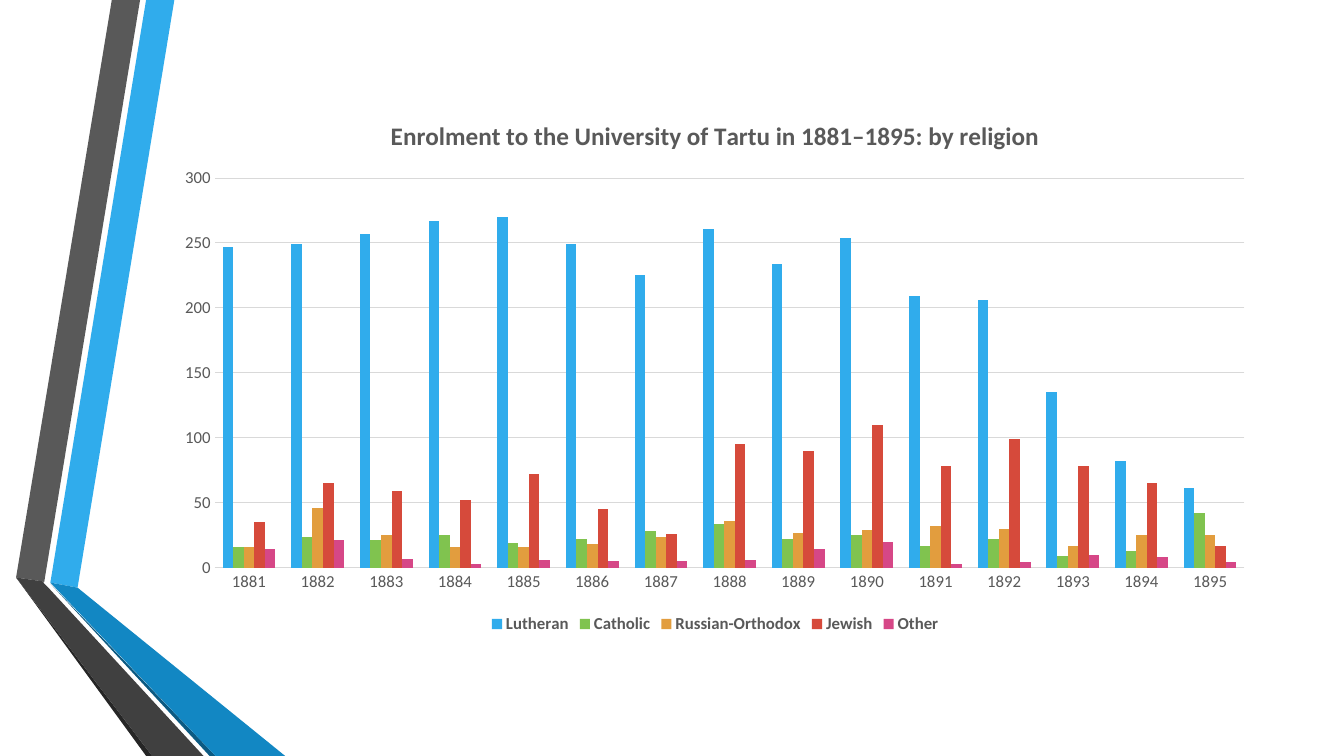
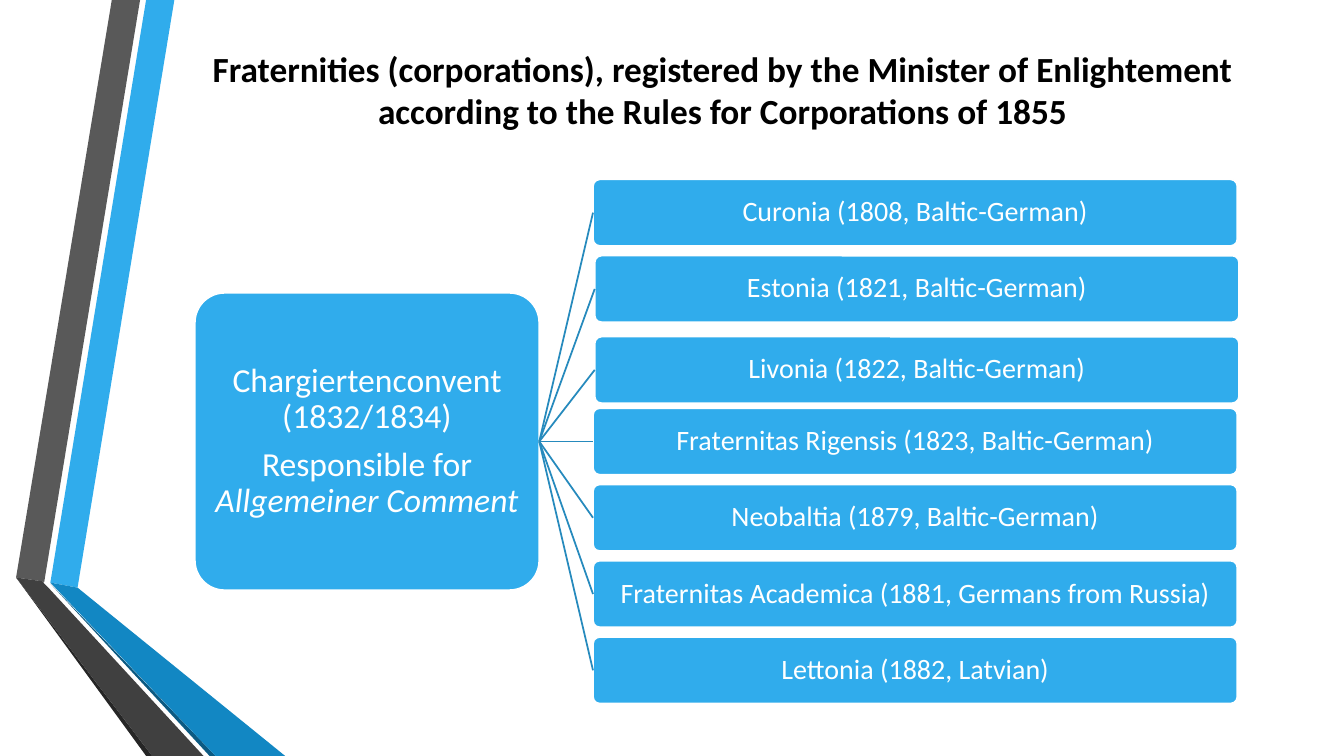
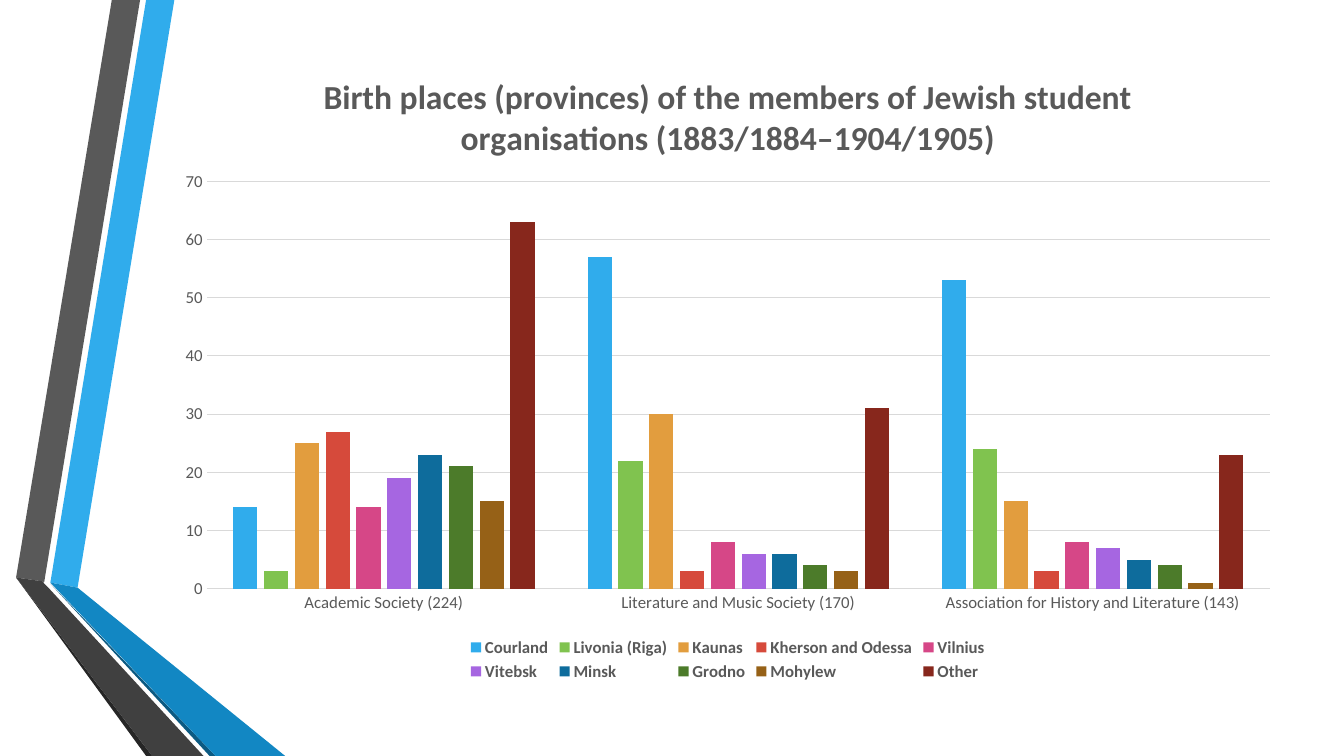
from dataclasses import dataclass
from typing import NamedTuple

from lxml.etree import SubElement
from pptx import Presentation
from pptx.chart.chart import Chart
from pptx.chart.data import CategoryChartData
from pptx.dml.color import RGBColor
from pptx.enum.chart import XL_CHART_TYPE as ChartType
from pptx.enum.chart import XL_LEGEND_POSITION as LegendPosition
from pptx.enum.chart import XL_TICK_MARK as TickMark
from pptx.enum.shapes import MSO_CONNECTOR as ConnectorType
from pptx.enum.shapes import MSO_SHAPE as ShapeType
from pptx.enum.text import MSO_ANCHOR as Anchor
from pptx.enum.text import PP_ALIGN as Align
from pptx.oxml.ns import qn
from pptx.shapes.autoshape import Shape
from pptx.slide import Slide
from pptx.text.text import Font
from pptx.util import Emu, Pt

COLUMNS, ROWS = 160, 90
SLIDE_WIDTH, SLIDE_HEIGHT = Emu(12192000), Emu(6858000)
CELL = SLIDE_WIDTH / COLUMNS
FONT = "Calibri"

BLACK = RGBColor(0x00, 0x00, 0x00)
WHITE = RGBColor(0xFF, 0xFF, 0xFF)
BLUE = RGBColor(0x30, 0xAC, 0xEC)
BLUE_FOLD = RGBColor(0x12, 0x87, 0xC3)
BLUE_EDGE = RGBColor(0x0C, 0x5A, 0x82)
BLUE_LINE = RGBColor(0x26, 0x8A, 0xBD)
GREY = RGBColor(0x59, 0x59, 0x59)
GREY_FOLD = RGBColor(0x40, 0x40, 0x40)
GREY_EDGE = RGBColor(0x26, 0x26, 0x26)
GRID_GREY = RGBColor(0xD9, 0xD9, 0xD9)
GREEN = RGBColor(0x80, 0xC3, 0x4F)
ORANGE = RGBColor(0xE2, 0x9D, 0x3E)
RED = RGBColor(0xD6, 0x4A, 0x3B)
PINK = RGBColor(0xD6, 0x47, 0x87)
PURPLE = RGBColor(0xA6, 0x66, 0xE1)
NAVY = RGBColor(0x0E, 0x6C, 0x9C)
DARK_GREEN = RGBColor(0x4C, 0x7B, 0x2A)
BROWN = RGBColor(0x96, 0x61, 0x17)
DARK_RED = RGBColor(0x87, 0x27, 0x1C)


class Area(NamedTuple):
    column: float
    row: float
    columns: float
    rows: float

    def emu(self) -> list[Emu]:
        return [cells(value) for value in self]


class Span(NamedTuple):
    text: str
    italic: bool = False


class Band(NamedTuple):
    color: RGBColor
    points: list[tuple[float, float]]


class Series(NamedTuple):
    name: str
    values: list[int]
    color: RGBColor


class Fraternity(NamedTuple):
    text: str
    column_shift: float = 0
    row_shift: float = 0


@dataclass(frozen=True)
class ColumnChart:
    title: str
    title_size: float
    area: Area
    plot: Area
    maximum: int
    step: int
    gap: int
    overlap: int
    categories: list[str]
    series: list[Series]


BANDS = [
    Band(BLUE, [(6, 69.36), (9.24, 69.96), (20.76, 0), (17.4, 0)]),
    Band(GREY, [(16.68, 0), (13.32, 0), (1.92, 68.76), (5.28, 69.24)]),
    Band(GREY_EDGE, [(1.92, 68.76), (17.4, ROWS), (18.12, ROWS)]),
    Band(BLUE_EDGE, [(6, 69.48), (24.96, ROWS), (25.68, ROWS)]),
    Band(BLUE_FOLD, [(6, 69.36), (25.68, ROWS), (33.96, ROWS), (9.24, 69.96)]),
    Band(GREY_FOLD, [(24.24, ROWS), (5.76, 69.96), (5.16, 69.36),
                     (5.28, 69.24), (1.92, 68.76), (18.12, ROWS)]),
]

RELIGION = ColumnChart(
    title="Enrolment to the University of Tartu in 1881–1895: by religion",
    title_size=18,
    area=Area(19.44, 11.64, 131.4, 64.32),
    plot=Area(25.56, 21.2, 122.6, 46.4),
    maximum=300, step=50, gap=150, overlap=0,
    categories=[str(year) for year in range(1881, 1896)],
    series=[
        Series("Lutheran", [247, 249, 257, 267, 270, 249, 225, 261, 234, 254,
                            209, 206, 135, 82, 61], BLUE),
        Series("Catholic", [16, 24, 21, 25, 19, 22, 28, 34, 22, 25,
                            17, 22, 9, 13, 42], GREEN),
        Series("Russian-Orthodox", [16, 46, 25, 16, 16, 18, 24, 36, 27, 29,
                                    32, 30, 17, 25, 25], ORANGE),
        Series("Jewish", [35, 65, 59, 52, 72, 45, 26, 95, 90, 110,
                          78, 99, 78, 65, 17], RED),
        Series("Other", [14, 21, 7, 3, 6, 5, 5, 6, 14, 20,
                         3, 4, 10, 8, 4], PINK),
    ],
)

BIRTH_PLACES = ColumnChart(
    title="Birth places (provinces) of the members of Jewish student "
          "organisations (1883/1884–1904/1905)",
    title_size=24,
    area=Area(19.44, 5.88, 134.4, 75.72),
    plot=Area(24.6, 21.6, 126.6, 48.5),
    maximum=70, step=10, gap=219, overlap=-27,
    categories=["Academic Society (224)", "Literature and Music Society (170)",
                "Association for History and Literature (143)"],
    series=[
        Series("Courland", [14, 57, 53], BLUE),
        Series("Livonia (Riga)", [3, 22, 24], GREEN),
        Series("Kaunas", [25, 30, 15], ORANGE),
        Series("Kherson and Odessa", [27, 3, 3], RED),
        Series("Vilnius", [14, 8, 8], PINK),
        Series("Vitebsk", [19, 6, 7], PURPLE),
        Series("Minsk", [23, 6, 5], NAVY),
        Series("Grodno", [21, 4, 4], DARK_GREEN),
        Series("Mohylew", [15, 3, 1], BROWN),
        Series("Other", [63, 31, 23], DARK_RED),
    ],
)

TITLE_AREA = Area(19.44, 5.04, 133.2, 11.16)
CONVENT_AREA = Area(23.2, 34.86, 41, 35.4)
FIRST_FRATERNITY = Area(70.6, 21.36, 76.7, 7.92)
FRATERNITY_PITCH = 9.08
FRATERNITIES = [
    Fraternity("Curonia (1808, Baltic-German)"),
    Fraternity("Estonia (1821, Baltic-German)", column_shift=0.2),
    Fraternity("Livonia (1822, Baltic-German)", column_shift=0.2, row_shift=0.56),
    Fraternity("Fraternitas Rigensis (1823, Baltic-German)"),
    Fraternity("Neobaltia (1879, Baltic-German)"),
    Fraternity("Fraternitas Academica (1881, Germans from Russia)"),
    Fraternity("Lettonia (1882, Latvian)"),
]


def cells(count: float) -> Emu:
    return Emu(round(count * CELL))


def style_font(font: Font, *, size: float, color: RGBColor,
               bold: bool = False, italic: bool = False) -> None:
    font.name = FONT
    font.size = Pt(size)
    font.bold = bold
    font.italic = italic
    font.color.rgb = color


def write_text(box: Shape, paragraphs: list[list[Span]], *, size: float,
               color: RGBColor, bold: bool = False, inset: float = 1.2,
               line_spacing: float = 1.0, space_after: float = 0) -> None:
    frame = box.text_frame
    frame.word_wrap = True
    frame.vertical_anchor = Anchor.MIDDLE
    frame.margin_left = frame.margin_right = cells(inset)
    frame.margin_top = frame.margin_bottom = cells(min(inset, 0.6))
    for index, spans in enumerate(paragraphs):
        para = frame.add_paragraph() if index else frame.paragraphs[0]
        para.alignment = Align.CENTER
        para.line_spacing = line_spacing
        para.space_after = Pt(space_after if index < len(paragraphs) - 1 else 0)
        for span in spans:
            run = para.add_run()
            run.text = span.text
            style_font(run.font, size=size, color=color, bold=bold, italic=span.italic)


def draw_bands(page: Slide) -> None:
    for band in BANDS:
        first, *others = [(cells(column), cells(row)) for column, row in band.points]
        builder = page.shapes.build_freeform(*first)
        builder.add_line_segments(others, close=True)
        shape = builder.convert_to_shape()
        shape.shadow.inherit = False
        shape.fill.solid()
        shape.fill.fore_color.rgb = band.color
        shape.line.fill.background()


def add_page(deck: Presentation) -> Slide:
    page = deck.slides.add_slide(deck.slide_layouts[6])
    draw_bands(page)
    return page


def place_plot(chart: Chart, area: Area, plot: Area) -> None:
    plot_area = chart.element.find(f".//{qn('c:plotArea')}")
    for old in plot_area.findall(qn("c:layout")):
        plot_area.remove(old)
    layout = SubElement(plot_area, qn("c:layout"))
    plot_area.insert(0, layout)
    manual = SubElement(layout, qn("c:manualLayout"))
    settings = {
        "layoutTarget": "inner", "xMode": "edge", "yMode": "edge",
        "x": (plot.column - area.column) / area.columns,
        "y": (plot.row - area.row) / area.rows,
        "w": plot.columns / area.columns,
        "h": plot.rows / area.rows,
    }
    for name, value in settings.items():
        SubElement(manual, qn(f"c:{name}")).set("val", str(value))


def draw_chart(page: Slide, content: ColumnChart) -> None:
    data = CategoryChartData()
    data.categories = content.categories
    for series in content.series:
        data.add_series(series.name, series.values)
    chart = page.shapes.add_chart(
        ChartType.COLUMN_CLUSTERED, *content.area.emu(), data).chart
    style_font(chart.font, size=10, color=BLACK)

    chart.has_title = True
    run = chart.chart_title.text_frame.paragraphs[0].add_run()
    run.text = content.title
    style_font(run.font, size=content.title_size, color=GREY, bold=True)
    chart.chart_title.include_in_layout = False

    chart.has_legend = True
    chart.legend.position = LegendPosition.BOTTOM
    chart.legend.include_in_layout = False
    style_font(chart.legend.font, size=12, color=GREY, bold=True)

    for axis in (chart.category_axis, chart.value_axis):
        axis.major_tick_mark = axis.minor_tick_mark = TickMark.NONE
        style_font(axis.tick_labels.font, size=12, color=GREY)
    value_axis = chart.value_axis
    value_axis.minimum_scale = 0
    value_axis.maximum_scale = content.maximum
    value_axis.major_unit = content.step
    value_axis.format.line.fill.background()
    value_axis.has_major_gridlines = True
    for line in (chart.category_axis.format.line, value_axis.major_gridlines.format.line):
        line.color.rgb = GRID_GREY
        line.width = Pt(0.75)

    columns = chart.plots[0]
    columns.vary_by_categories = False
    columns.gap_width = content.gap
    columns.overlap = content.overlap
    for drawn, series in zip(columns.series, content.series):
        drawn.format.fill.solid()
        drawn.format.fill.fore_color.rgb = series.color
    place_plot(chart, content.area, content.plot)


def add_node(page: Slide, area: Area, paragraphs: list[list[Span]], *,
             size: float, inset: float) -> Shape:
    box = page.shapes.add_shape(ShapeType.ROUNDED_RECTANGLE, *area.emu())
    box.adjustments[0] = 0.1
    box.shadow.inherit = False
    box.fill.solid()
    box.fill.fore_color.rgb = BLUE
    box.line.color.rgb = WHITE
    box.line.width = Pt(1.25)
    write_text(box, paragraphs, size=size, color=WHITE, inset=inset,
               line_spacing=0.9, space_after=0.35 * size)
    return box


def join(page: Slide, start: Shape, end: Shape) -> None:
    line = page.shapes.add_connector(ConnectorType.STRAIGHT, 0, 0, 0, 0)
    line.begin_connect(start, 3)
    line.end_connect(end, 1)
    line.line.color.rgb = BLUE_LINE
    line.line.width = Pt(1.25)
    SubElement(line.element.spPr, qn("a:effectLst"))


def draw_fraternities(page: Slide) -> None:
    title = page.shapes.add_textbox(*TITLE_AREA.emu())
    write_text(title, [[Span("Fraternities (corporations), registered by the Minister of "
                             "Enlightement according to the Rules for Corporations of 1855")]],
               size=25.2, color=BLACK, bold=True)
    convent = add_node(page, CONVENT_AREA, [
        [Span("Chargiertenconvent (1832/1834)")],
        [Span("Responsible for "), Span("Allgemeiner Comment", italic=True)],
    ], size=24, inset=1.3)
    first = FIRST_FRATERNITY
    for index, fraternity in enumerate(FRATERNITIES):
        area = first._replace(
            column=first.column + fraternity.column_shift,
            row=first.row + index * FRATERNITY_PITCH + fraternity.row_shift)
        node = add_node(page, area, [[Span(fraternity.text)]], size=20, inset=0.36)
        join(page, convent, node)


def main() -> None:
    deck = Presentation()
    deck.slide_width, deck.slide_height = SLIDE_WIDTH, SLIDE_HEIGHT
    draw_chart(add_page(deck), RELIGION)
    draw_fraternities(add_page(deck))
    draw_chart(add_page(deck), BIRTH_PLACES)
    deck.save("out.pptx")


if __name__ == "__main__":
    main()
